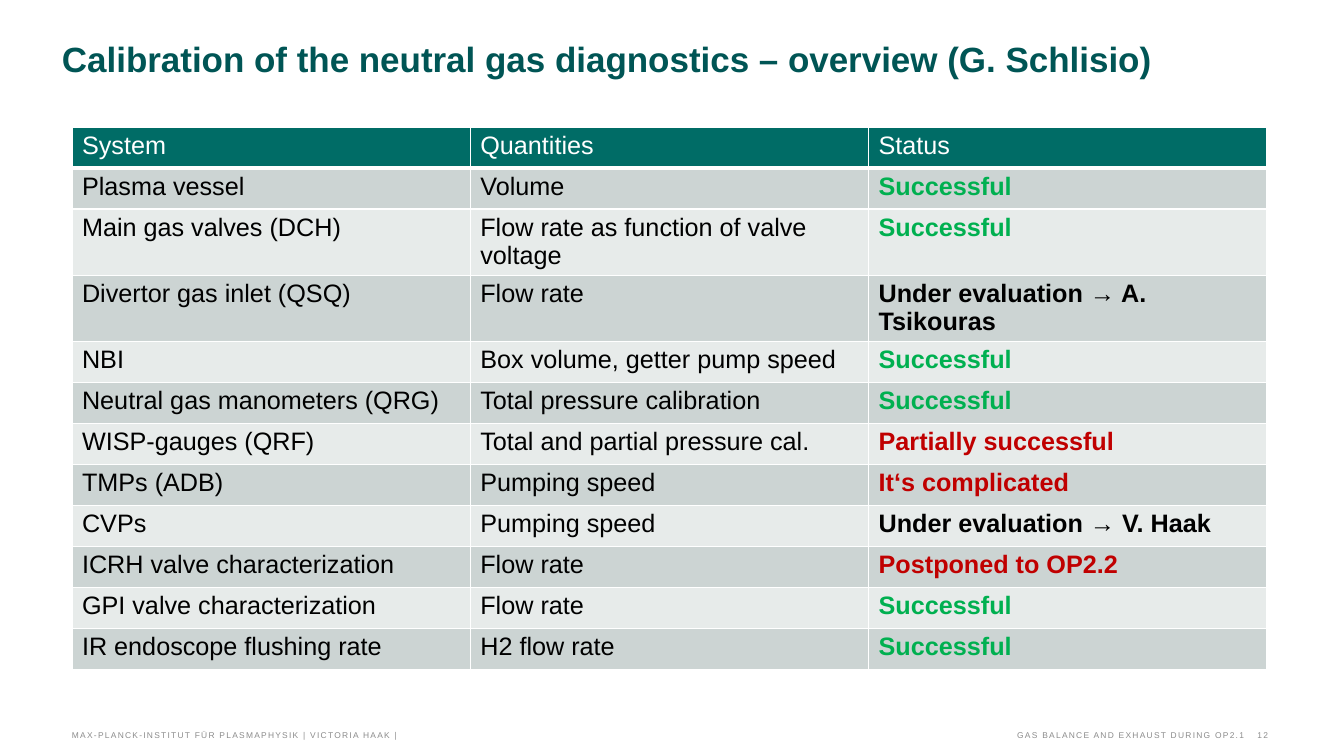
from lxml import etree
from pptx import Presentation
from pptx import util as u
from pptx.dml.color import RGBColor
from pptx.enum import text
from pptx.oxml.ns import qn

PX = 914400 / 100.8
COLORS = {
    "white": "FFFFFF",
    "black": "000000",
    "title": "005555",
    "header": "006C66",
    "dark_band": "CCD4D3",
    "light_band": "E7EBEA",
    "good": "00B050",
    "bad": "C00000",
    "footer": "8C8C8C",
}
HEADINGS = ["System", "Quantities", "Status"]
SYSTEMS = [
    ("Plasma vessel", "Volume", "Successful", "good"),
    ("Main gas valves (DCH)", "Flow rate as function of valve voltage", "Successful", "good"),
    ("Divertor gas inlet (QSQ)", "Flow rate", "Under evaluation → A. Tsikouras", "black"),
    ("NBI", "Box volume, getter pump speed", "Successful", "good"),
    ("Neutral gas manometers (QRG)", "Total pressure calibration", "Successful", "good"),
    ("WISP-gauges (QRF)", "Total and partial pressure cal.", "Partially successful", "bad"),
    ("TMPs (ADB)", "Pumping speed", "It‘s complicated", "bad"),
    ("CVPs", "Pumping speed", "Under evaluation → V. Haak", "black"),
    ("ICRH valve characterization", "Flow rate", "Postponed to OP2.2", "bad"),
    ("GPI valve characterization", "Flow rate", "Successful", "good"),
    ("IR endoscope flushing rate", "H2 flow rate", "Successful", "good"),
]


def px(length):
    return u.Emu(round(length * PX))


def write(frame, words, size, color, bold=False, align=None, line=None, after=None, tracking=None):
    para = frame.paragraphs[0]
    para.alignment = align
    if line:
        para.line_spacing = u.Pt(line)
    if after:
        para.space_after = u.Pt(after)
    span = para.add_run()
    span.text = words
    span.font.name = "Arial"
    span.font.size = u.Pt(size)
    span.font.bold = bold
    span.font.color.rgb = RGBColor.from_string(COLORS[color])
    if tracking:
        span.font._element.set("spc", str(round(tracking * 100)))


def add_text(page, area, words, anchor=text.MSO_ANCHOR.TOP, **style):
    box = page.shapes.add_textbox(*map(px, area))
    frame = box.text_frame
    frame.word_wrap = True
    frame.vertical_anchor = anchor
    frame.margin_left = frame.margin_right = 0
    frame.margin_top = frame.margin_bottom = 0
    write(frame, words, **style)


def style_cell(cell, fill, bottom):
    props = cell._tc.get_or_add_tcPr()
    for side, width in (("L", 1), ("R", 1), ("T", 1), ("B", bottom)):
        edge = etree.SubElement(props, qn(f"a:ln{side}"), w=str(u.Pt(width)))
        paint = etree.SubElement(edge, qn("a:solidFill"))
        etree.SubElement(paint, qn("a:srgbClr"), val=COLORS["white"])
    cell.fill.solid()
    cell.fill.fore_color.rgb = RGBColor.from_string(COLORS[fill])


def add_status_table(page, left, top, width, row_height):
    count = len(SYSTEMS) + 1
    table = page.shapes.add_table(
        count, len(HEADINGS), px(left), px(top), px(width), px(row_height * count)
    ).table
    for column in table.columns:
        column.width = px(width / len(HEADINGS))
    for row in table.rows:
        row.height = px(row_height)
    for index, heading in enumerate(HEADINGS):
        cell = table.cell(0, index)
        style_cell(cell, "header", 3)
        write(cell.text_frame, heading, size=18, color="white", line=20)
    for number, (*words, status_color) in enumerate(SYSTEMS, 1):
        for index, phrase in enumerate(words):
            is_status = index == len(words) - 1
            cell = table.cell(number, index)
            style_cell(cell, "dark_band" if number % 2 else "light_band", 1)
            write(cell.text_frame, phrase, size=18, line=20, bold=is_status,
                  color=status_color if is_status else "black")


def add_footer(page, left, top, width, height):
    style = dict(anchor=text.MSO_ANCHOR.BOTTOM, size=6, color="footer", tracking=0.9)
    right = text.PP_ALIGN.RIGHT
    number_width = 24
    add_text(page, (left, top, width // 2, height),
             "MAX-PLANCK-INSTITUT FÜR PLASMAPHYSIK | VICTORIA HAAK |", **style)
    add_text(page, (left + width // 2, top, width - width // 2 - number_width, height),
             "GAS BALANCE AND EXHAUST DURING OP2.1", align=right, **style)
    add_text(page, (left + width - number_width, top, number_width, height),
             "12", align=right, **style)


def main():
    deck = Presentation()
    deck.slide_width, deck.slide_height = px(1344), px(756)
    page = deck.slides.add_slide(deck.slide_layouts[6])
    add_text(page, (62, 40, 1100, 87),
             "Calibration of the neutral gas diagnostics – overview (G. Schlisio)",
             size=25, color="title", bold=True, line=28, after=18)
    add_status_table(page, 72, 127, 1195, 41)
    add_footer(page, 72, 724, 1196, 16)
    deck.save("out.pptx")


if __name__ == "__main__":
    main()
